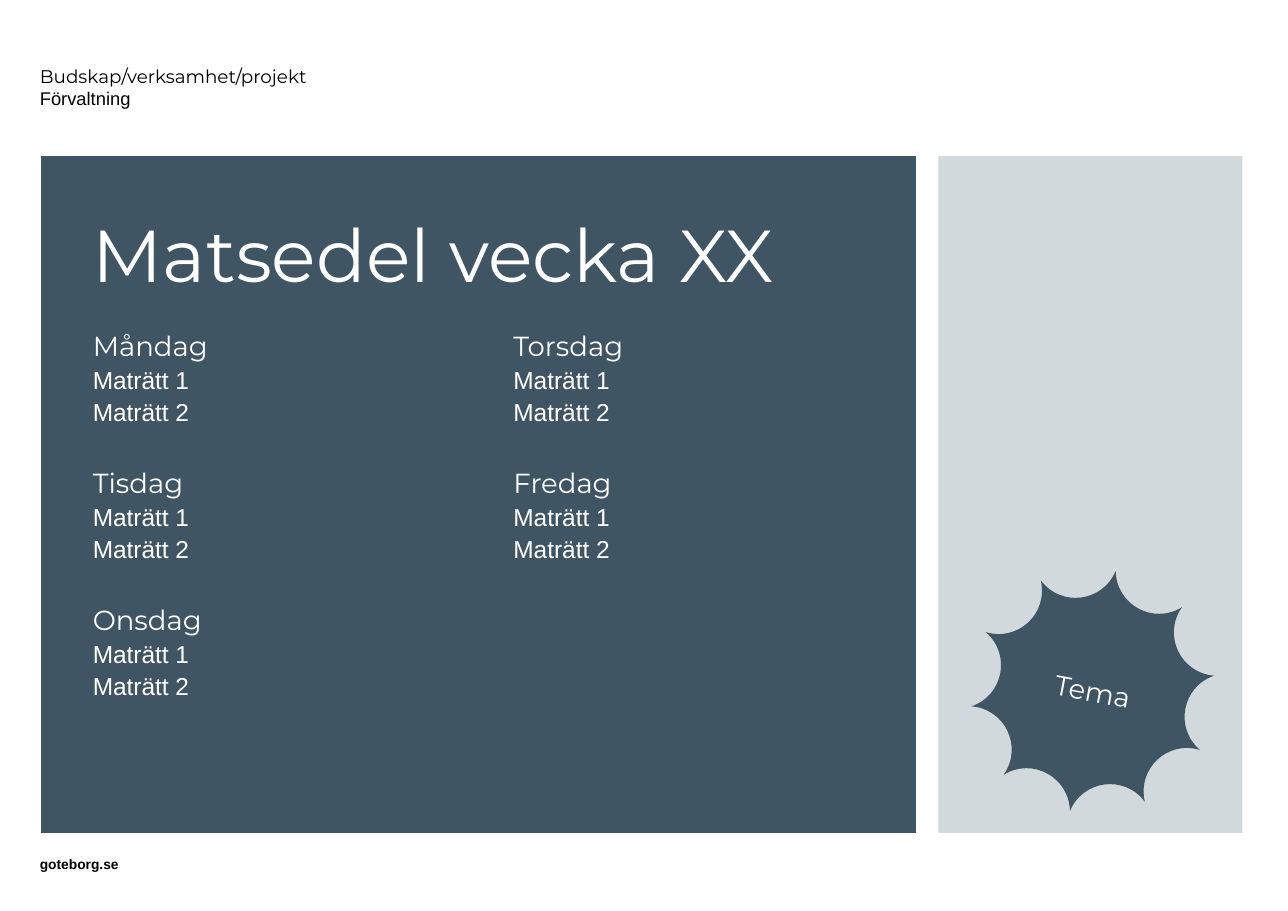
from math import cos, radians, sin

from lxml import etree
from pptx import Presentation
from pptx.dml.color import RGBColor
from pptx.enum import shapes, text
from pptx.oxml import ns
from pptx.util import Cm, Pt

SLATE, MIST, WHITE, BLACK = "3F5564", "D1D9DC", "FFFFFF", "000000"
HEADING_FONT, BODY_FONT = "Montserrat", "Arial"
DISHES = ["Maträtt 1", "Maträtt 2"]
MIDDLE = text.MSO_ANCHOR.MIDDLE


def colour(hex_code):
    return RGBColor.from_string(hex_code)


def paint(shape, fill):
    shape.shadow.inherit = False
    shape.fill.solid()
    shape.fill.fore_color.rgb = colour(fill)
    shape.line.fill.background()


def add_panel(page, left, width, fill):
    panel = page.shapes.add_shape(
        shapes.MSO_SHAPE.RECTANGLE, Cm(left), Cm(3.6), Cm(width), Cm(15.6))
    paint(panel, fill)


def style(para, size, font, ink, bold=False):
    for span in para.runs:
        span.font.size = Pt(size)
        span.font.name = font
        span.font.bold = bold
        span.font.color.rgb = colour(ink)


def add_text(page, left, top, width, height, lines, anchor=text.MSO_ANCHOR.TOP):
    box = page.shapes.add_textbox(Cm(left), Cm(top), Cm(width), Cm(height))
    frame = box.text_frame
    frame.word_wrap = True
    frame.vertical_anchor = anchor
    frame.margin_left = frame.margin_right = 0
    frame.margin_top = frame.margin_bottom = 0
    frame.text = "\n".join(lines)
    return frame.paragraphs


def add_menu(page, left, days):
    lines = [line for day in days for line in [day, *DISHES]]
    for index, para in enumerate(add_text(page, left, 7.67, 8.61, 10.64, lines)):
        para.line_spacing = 0.9
        if index % (len(DISHES) + 1):
            para.space_before = Pt(3.6)
            style(para, 16, BODY_FONT, WHITE)
        else:
            para.space_before = Pt(28.5 if index else 0)
            style(para, 18, HEADING_FONT, WHITE)


def scalloped_outline(centre_x, centre_y, tips=10, radius=2.82):
    """A start tip, then two control points and the next tip for each scallop."""
    turn = 360 / tips

    def polar(distance, angle):
        return (Cm(centre_x + distance * cos(radians(angle))),
                Cm(centre_y + distance * sin(radians(angle))))

    points = [polar(radius, 90)]
    for tip in range(tips):
        start, end = 90 + tip * turn, 90 + (tip + 1) * turn
        points += [polar(2.06, start + 4.4), polar(2.06, end - 4.4), polar(radius, end)]
    return points


def curve_segments(shape):
    """Turn every three line segments into one Bézier curve."""
    lines = list(shape.element.iter(ns.qn("a:lnTo")))
    for first, second, third in zip(lines[::3], lines[1::3], lines[2::3]):
        curve = etree.Element(ns.qn("a:cubicBezTo"))
        first.addprevious(curve)
        for line in (first, second, third):
            curve.append(line[0])
            line.getparent().remove(line)


def add_badge(page, label):
    first, *rest = scalloped_outline(25.2, 15.93)
    builder = page.shapes.build_freeform(*first)
    builder.add_line_segments(rest, close=True)
    badge = builder.convert_to_shape()
    curve_segments(badge)
    badge.rotation = 10.8
    paint(badge, SLATE)
    frame = badge.text_frame
    frame.word_wrap = True
    frame.vertical_anchor = MIDDLE
    frame.margin_left = frame.margin_right = Cm(0.7)
    frame.margin_top = frame.margin_bottom = Cm(0.2)
    frame.text = label
    para = frame.paragraphs[0]
    para.alignment = text.PP_ALIGN.CENTER
    style(para, 18, HEADING_FONT, WHITE)


def main():
    deck = Presentation()
    deck.slide_width, deck.slide_height = Cm(29.7), Cm(21)
    page = deck.slides.add_slide(deck.slide_layouts[6])

    # Panels
    add_panel(page, 21.64, 7.01, MIST)
    add_panel(page, 0.95, 20.17, SLATE)

    # Title and weekly menu
    title = add_text(page, 2.14, 4.95, 18.29, 2.03, ["Matsedel vecka XX"], MIDDLE)[0]
    title.line_spacing = 0.9
    style(title, 48, HEADING_FONT, WHITE)
    add_menu(page, 2.14, ["Måndag", "Tisdag", "Onsdag"])
    add_menu(page, 11.84, ["Torsdag", "Fredag"])

    # Theme badge
    add_badge(page, "Tema")

    # Footer and sender
    footer = add_text(page, 0.92, 19.71, 13.16, 0.43, ["goteborg.se"], MIDDLE)[0]
    style(footer, 9, BODY_FONT, BLACK, bold=True)
    sender = add_text(page, 0.92, 1.52, 14.02, 0.86,
                      ["Budskap/verksamhet/projekt", "Förvaltning"])
    for para, font in zip(sender, [HEADING_FONT, BODY_FONT]):
        para.line_spacing = Pt(14.1)
        style(para, 12, font, BLACK)

    deck.save("out.pptx")


if __name__ == "__main__":
    main()
